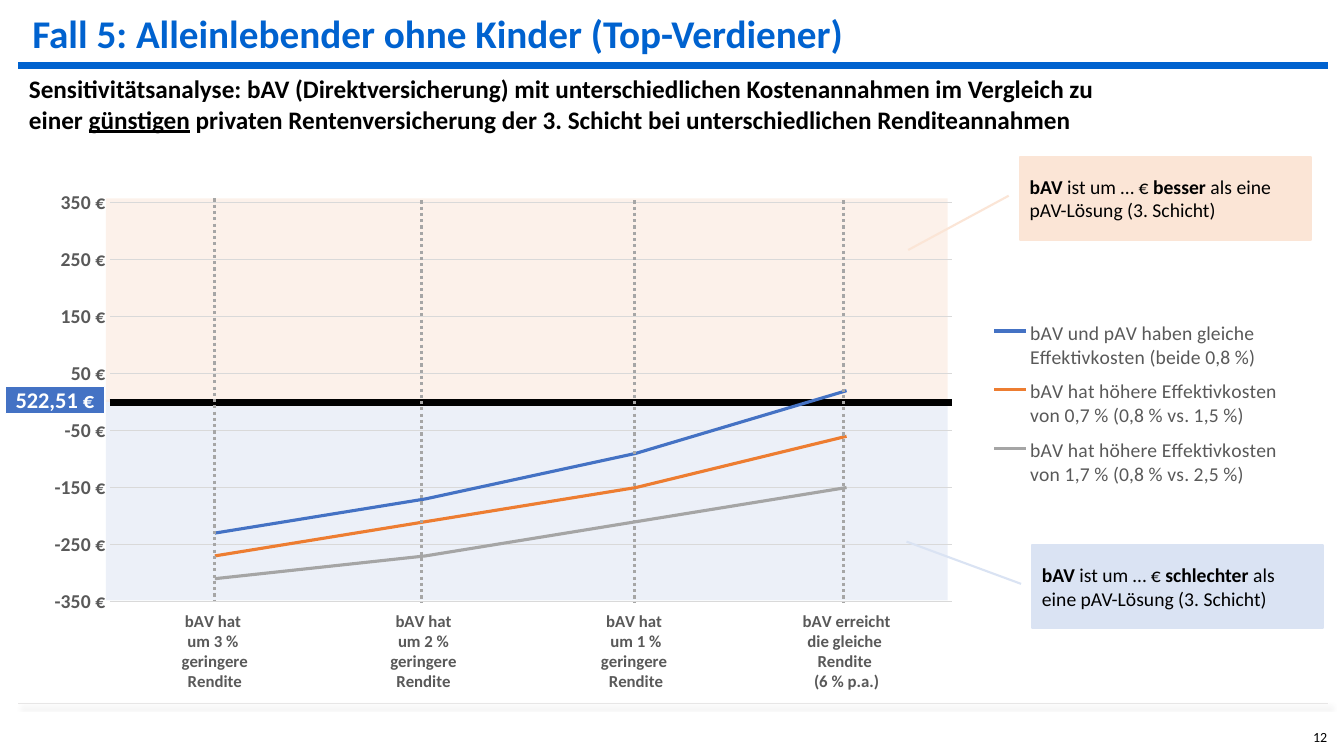
from lxml.etree import SubElement
from pptx import Presentation
from pptx.chart.data import CategoryChartData
from pptx.dml.color import RGBColor
from pptx.enum.chart import (XL_CHART_TYPE, XL_LEGEND_POSITION,
                             XL_TICK_LABEL_POSITION, XL_TICK_MARK)
from pptx.enum.dml import MSO_LINE
from pptx.enum.shapes import MSO_CONNECTOR, MSO_SHAPE
from pptx.enum.text import MSO_ANCHOR, MSO_AUTO_SIZE, PP_ALIGN
from pptx.oxml.ns import qn
from pptx.util import Cm, Pt

FONT = "Calibri"
COLORS = {
    "title": "0062CF", "black": "000000", "white": "FFFFFF", "footer": "E7E6E6",
    "better": "FBE5D6", "worse": "DAE3F3", "blue": "4472C4", "orange": "ED7D31",
    "gray": "A5A5A5", "guide": "A6A6A6", "grid": "D9D9D9", "label": "595959",
}
CATEGORIES = [
    "bAV hat \num 3 % \ngeringere\nRendite",
    "bAV hat \num 2 % \ngeringere \nRendite ",
    "bAV hat \num 1 %\ngeringere \nRendite",
    "bAV erreicht\ndie gleiche \nRendite \n(6 % p.a.)",
]
COST_CASES = [
    ("bAV und pAV haben gleiche \nEffektivkosten (beide 0,8 %)", (-230, -170, -90, 20), "blue"),
    ("bAV hat höhere Effektivkosten \nvon 0,7 % (0,8 % vs. 1,5 %)", (-270, -210, -150, -60), "orange"),
    ("bAV hat höhere Effektivkosten\nvon 1,7 % (0,8 % vs. 2,5 %)", (-310, -270, -210, -150), "gray"),
]


def rgb(name):
    return RGBColor.from_string(COLORS[name])


def set_font(font, size, color, bold=None):
    font.name, font.size, font.bold = FONT, Pt(size), bold
    font.color.rgb = rgb(color)


def set_line(line, color, width):
    line.color.rgb, line.width = rgb(color), Pt(width)


def write(frame, runs, size, color="black", bold=None, align=PP_ALIGN.LEFT):
    """Fill one paragraph; each run is (text, font attributes)."""
    frame.word_wrap = True
    paragraph = frame.paragraphs[0]
    paragraph.alignment = align
    for text, attributes in runs:
        run = paragraph.add_run()
        run.text = text
        for key, value in attributes.items():
            setattr(run.font, key, value)
    set_font(paragraph.font, size, color, bold)


def add_text(slide, box, runs, size, bold=None):
    frame = slide.shapes.add_textbox(*map(Cm, box)).text_frame
    write(frame, runs, size, bold=bold)


def add_box(slide, kind, box, color, alpha=None):
    shape = slide.shapes.add_shape(kind, *map(Cm, box))
    shape.shadow.inherit = False
    shape.fill.solid()
    shape.fill.fore_color.rgb = rgb(color)
    shape.line.fill.background()
    if alpha:
        fill_color = shape.fill._xPr.find(qn("a:solidFill"))[0]
        SubElement(fill_color, qn("a:alpha"), val=str(alpha * 1000))
    return shape


def add_rule(slide, start, end, color, width, dash=None, shadow=False):
    rule = slide.shapes.add_connector(MSO_CONNECTOR.STRAIGHT, *map(Cm, start + end))
    set_line(rule.line, color, width)
    if dash:
        rule.line.dash_style = dash
    effects = SubElement(rule._element.spPr, qn("a:effectLst"))
    if shadow:
        outer = SubElement(effects, qn("a:outerShdw"), blurRad="38100", dist="38100",
                           dir="2700000", algn="tl", rotWithShape="0")
        shade = SubElement(outer, qn("a:srgbClr"), val=COLORS["black"])
        SubElement(shade, qn("a:alpha"), val="40000")


def add_callout(slide, box, color, adjustments, verdict, ending):
    callout = add_box(slide, MSO_SHAPE.LINE_CALLOUT_1, box, color)
    set_line(callout.line, color, 1.5)
    for index, value in enumerate(adjustments):
        callout.adjustments[index] = value
    callout.text_frame.vertical_anchor = MSO_ANCHOR.MIDDLE
    strong = {"bold": True}
    write(callout.text_frame,
          [("bAV", strong), (" ist um … € ", {}), (verdict, strong), (ending, {})], 14)


def place(element, index, x, y, w, h, inner=False):
    """Give a chart part a manual layout in fractions of the chart."""
    for old in element.findall(qn("c:layout")):
        element.remove(old)
    layout = SubElement(element, qn("c:layout"))
    element.insert(index, layout)
    manual = SubElement(layout, qn("c:manualLayout"))
    if inner:
        SubElement(manual, qn("c:layoutTarget"), val="inner")
    for key in ("xMode", "yMode"):
        SubElement(manual, qn(f"c:{key}"), val="edge")
    for key, value in zip("xywh", (x, y, w, h)):
        SubElement(manual, qn(f"c:{key}"), val=str(value))


def add_cost_chart(slide):
    data = CategoryChartData(number_format="General")
    data.categories = CATEGORIES
    for name, values, _ in COST_CASES:
        data.add_series(name, values)
    chart = slide.shapes.add_chart(XL_CHART_TYPE.LINE, Cm(0.84), Cm(4.39),
                                   Cm(32.56), Cm(13.79), data).chart
    chart.has_title = False
    set_font(chart.font, 10, "black")
    chart.plots[0].vary_by_categories = False
    for series, (_, _, color) in zip(chart.plots[0].series, COST_CASES):
        series.smooth = False
        set_line(series.format.line, color, 2.25)

    # Axes
    returns, euros = chart.category_axis, chart.value_axis
    for axis, size in ((returns, 12), (euros, 14)):
        axis.major_tick_mark = axis.minor_tick_mark = XL_TICK_MARK.NONE
        set_font(axis.tick_labels.font, size, "label", True)
    returns.tick_label_position = XL_TICK_LABEL_POSITION.LOW
    set_line(returns.format.line, "black", 5)
    euros.minimum_scale, euros.maximum_scale, euros.major_unit = -350, 350, 100
    euros.tick_labels.number_format = '#,##0\\ "€"'
    euros.tick_labels.number_format_is_linked = False
    euros.format.line.fill.background()
    set_line(euros.major_gridlines.format.line, "grid", 0.75)

    # Legend and plot position
    chart.has_legend = True
    chart.legend.position = XL_LEGEND_POSITION.RIGHT
    chart.legend.include_in_layout = False
    set_font(chart.legend.font, 14, "label")
    place(chart.legend._element, 1, 0.73, 0.25, 0.25, 0.34)
    plot_area = chart._chartSpace.chart.plotArea
    place(plot_area, 0, 0.059, 0.052, 0.652, 0.729, inner=True)


def main():
    prs = Presentation()
    prs.slide_width, prs.slide_height = Cm(33.87), Cm(19.05)
    slide = prs.slides.add_slide(prs.slide_layouts[5])

    # Header and footer
    title = slide.shapes.title
    title.left, title.top, title.width, title.height = map(Cm, (0.56, 0.1, 32.77, 1.45))
    title.text_frame.auto_size = MSO_AUTO_SIZE.NONE
    title.text_frame.vertical_anchor = MSO_ANCHOR.MIDDLE
    write(title.text_frame, [("Fall 5: Alleinlebender ohne Kinder (Top-Verdiener)", {})],
          28, "title", True)
    add_rule(slide, (0.46, 1.65), (33.48, 1.65), "title", 4.5)
    add_rule(slide, (0.46, 17.73), (33.48, 17.73), "footer", 1, shadow=True)
    add_text(slide, (0.48, 1.73, 28.42, 1.8), [
        ("Sensitivitätsanalyse: bAV (Direktversicherung) mit unterschiedlichen "
         "Kostenannahmen im Vergleich zu einer ", {}),
        ("günstigen", {"underline": True}),
        (" privaten Rentenversicherung der 3. Schicht bei unterschiedlichen "
         "Renditeannahmen", {})], 18, True)
    add_text(slide, (32.84, 18.24, 1.35, 0.79), [("12", {})], 10)

    # Zones behind the chart
    add_box(slide, MSO_SHAPE.RECTANGLE, (2.67, 10.08, 21.21, 5.05), "worse", 50)
    add_box(slide, MSO_SHAPE.RECTANGLE, (2.67, 5, 21.21, 5.13), "better", 50)
    add_cost_chart(slide)

    # Callouts for the zones
    add_callout(slide, (25.7, 3.96, 7.34, 2.08), "better", (0.468, -0.038, 1.125, -0.383),
                "besser", " als eine pAV-Lösung (3. Schicht)")
    add_callout(slide, (26.01, 13.74, 7.34, 2.08), "worse", (0.468, -0.038, -0.044, -0.431),
                "schlechter", " als eine pAV-Lösung (3. Schicht)")

    # Guides at the four return assumptions
    for x, top in ((5.41, 5), (10.62, 5.05), (15.98, 5.05), (21.26, 5.05)):
        add_rule(slide, (x, top), (x, top + 10.14), "guide", 2.25, MSO_LINE.ROUND_DOT)

    # Reference pension at the zero line
    pension = add_box(slide, MSO_SHAPE.RECTANGLE, (0.13, 9.73, 2.51, 0.69), "blue")
    set_line(pension.line, "white", 0.75)
    frame = pension.text_frame
    frame.margin_top = frame.margin_bottom = 0
    frame.vertical_anchor = MSO_ANCHOR.MIDDLE
    write(frame, [("522,51 €", {})], 16, "white", True, PP_ALIGN.CENTER)
    frame.word_wrap = False

    prs.save("out.pptx")


if __name__ == "__main__":
    main()
